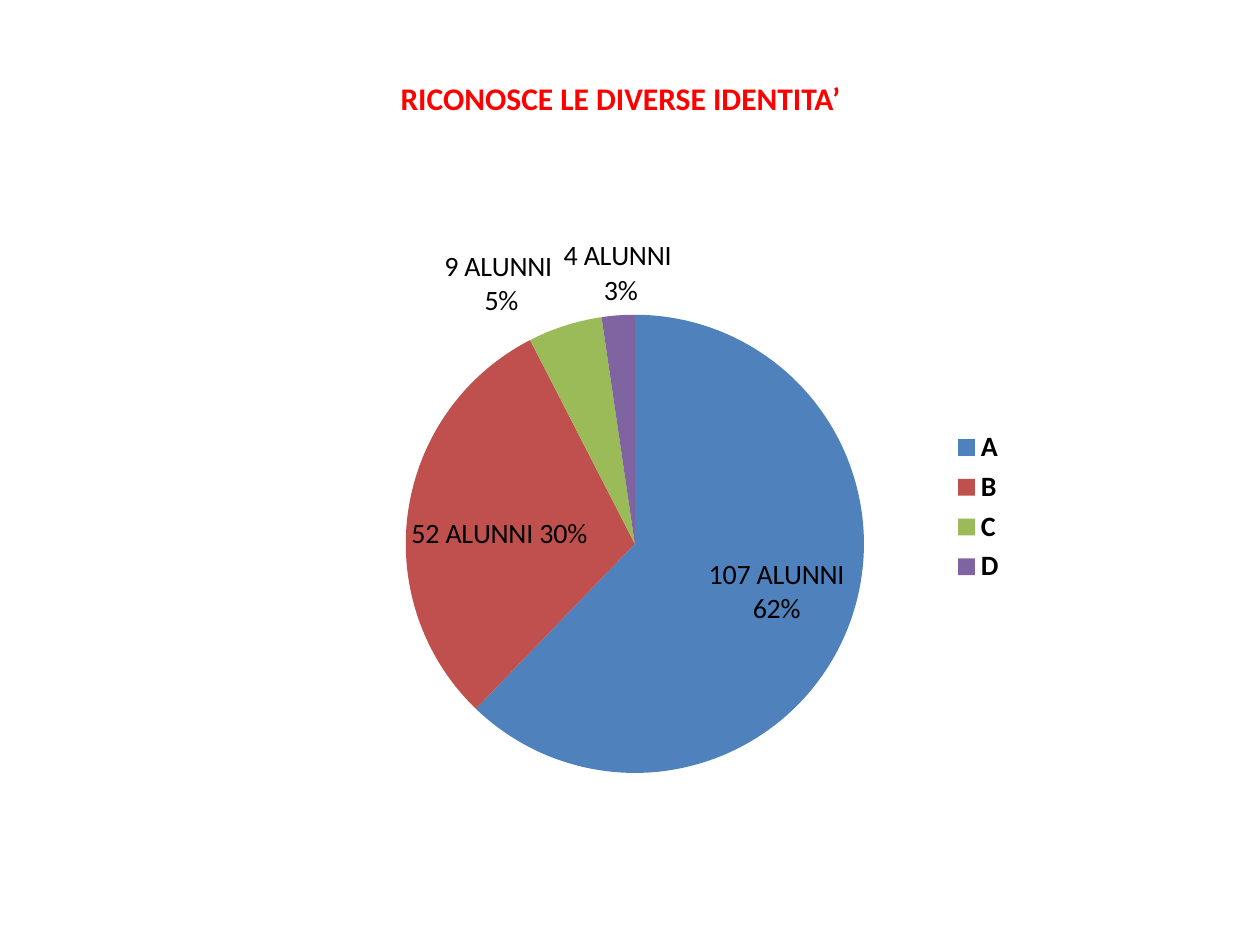
from dataclasses import dataclass

from lxml import etree
from pptx import Presentation
from pptx.chart.data import CategoryChartData
from pptx.dml.color import RGBColor
from pptx.enum import chart as ch, text
from pptx.oxml.ns import qn
from pptx.util import Inches, Pt


@dataclass(frozen=True)
class Theme:
    font: str = "Calibri"
    title_size: int = 18
    chart_size: int = 16
    title: str = "FF0000"
    ink: str = "000000"


THEME = Theme()
INSIDE = ch.XL_LABEL_POSITION.INSIDE_END
OUTSIDE = ch.XL_LABEL_POSITION.OUTSIDE_END

# grade, pupils, slice colour, label lines, label position
GRADES = [
    ("A", 107, "4F81BD", ["107 ALUNNI 62%"], INSIDE),
    ("B", 52, "C0504D", ["52 ALUNNI 30%"], INSIDE),
    ("C", 9, "9BBB59", ["9 ALUNNI ", "5%"], OUTSIDE),
    ("D", 4, "8064A2", ["4 ALUNNI", " 3%"], OUTSIDE),
]
# label shifts, in fractions of the chart
SHIFTS = {"A": (0.005, 0), "B": (-0.005, 0.01), "C": (-0.005, 0)}


def style_font(font, size, color, bold=False):
    font.name = THEME.font
    font.size = Pt(size)
    font.bold = bold
    font.color.rgb = RGBColor.from_string(color)


def add_title(s, box, title):
    sp = s.shapes.title
    sp.left, sp.top, sp.width, sp.height = (Inches(v) for v in box)
    tf = sp.text_frame
    tf.word_wrap = True
    tf.auto_size = text.MSO_AUTO_SIZE.NONE
    tf.vertical_anchor = text.MSO_ANCHOR.TOP
    p = tf.paragraphs[0]
    p.alignment = text.PP_ALIGN.CENTER
    r = p.add_run()
    r.text = title
    style_font(r.font, THEME.title_size, THEME.title, True)


def add_manual_layout(layout, settings):
    manual = etree.SubElement(layout, qn("c:manualLayout"))
    for tag, value in settings:
        etree.SubElement(manual, qn(f"c:{tag}")).set("val", str(value))


def set_plot_layout(chart, x, y, w, h):
    """Fix the inner plot area, in fractions of the chart."""
    plot_area = chart.plots[0]._element.getparent()
    layout = plot_area.find(qn("c:layout"))
    if layout is None:
        layout = etree.Element(qn("c:layout"))
        plot_area.insert(0, layout)
    add_manual_layout(layout, [("layoutTarget", "inner"), ("xMode", "edge"),
                               ("yMode", "edge"), ("x", x), ("y", y),
                               ("w", w), ("h", h)])


def add_point_label(point, lines, position):
    tf = point.data_label.text_frame
    for i, line in enumerate(lines):
        p = tf.paragraphs[0] if i == 0 else tf.add_paragraph()
        r = p.add_run()
        r.text = line
        style_font(r.font, THEME.chart_size, THEME.ink)
    point.data_label.position = position


def shift_label(labels, i, x, y):
    """Move label i from its standard place."""
    label = labels._element.findall(qn("c:dLbl"))[i]
    layout = label.find(qn("c:layout"))
    if layout is None:
        layout = etree.Element(qn("c:layout"))
        label.find(qn("c:idx")).addnext(layout)
    add_manual_layout(layout, [("x", x), ("y", y)])


def add_grade_pie(s, box, grades):
    data = CategoryChartData()
    data.categories = [g[0] for g in grades]
    data.add_series("Series 1", [g[1] for g in grades])
    frame = s.shapes.add_chart(ch.XL_CHART_TYPE.PIE, *(Inches(v) for v in box), data)
    chart = frame.chart
    chart.has_title = False
    style_font(chart.font, 10, THEME.ink)
    set_plot_layout(chart, 0.25, 0.16, 0.57, 0.81)

    # Legend
    chart.has_legend = True
    chart.legend.position = ch.XL_LEGEND_POSITION.RIGHT
    chart.legend.include_in_layout = False
    style_font(chart.legend.font, THEME.chart_size, THEME.ink, True)

    # Slices and their labels
    plot = chart.plots[0]
    plot.vary_by_categories = True
    series = plot.series[0]
    labels = series.data_labels
    labels.show_value = True
    labels.show_percentage = True
    style_font(labels.font, THEME.chart_size, THEME.ink, True)
    for i, (grade, _, color, lines, position) in enumerate(grades):
        point = series.points[i]
        point.format.fill.solid()
        point.format.fill.fore_color.rgb = RGBColor.from_string(color)
        add_point_label(point, lines, position)
        if grade in SHIFTS:
            shift_label(labels, i, *SHIFTS[grade])


def main():
    prs = Presentation()
    prs.slide_width, prs.slide_height = Inches(10), Inches(7.5)
    s = prs.slides.add_slide(prs.slide_layouts[5])
    add_title(s, (2.17, 0.58, 5.51, 0.4), "RICONOSCE LE DIVERSE IDENTITA’")
    add_grade_pie(s, (1.54, 1.78, 6.54, 4.49), GRADES)
    prs.save("out.pptx")


if __name__ == "__main__":
    main()
